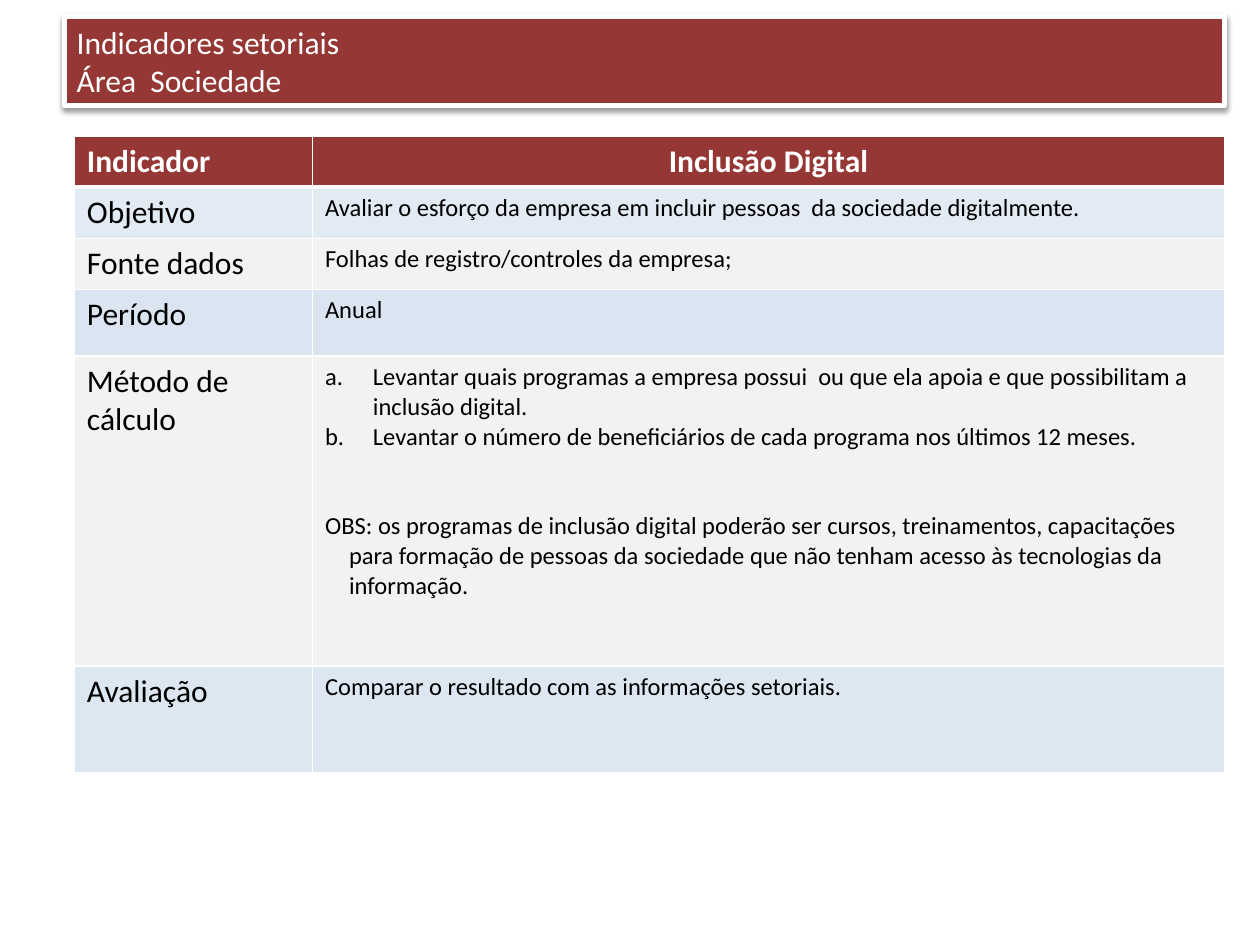
from dataclasses import dataclass

from lxml.etree import SubElement
from pptx import Presentation
from pptx.dml.color import RGBColor
from pptx.enum.shapes import MSO_SHAPE
from pptx.enum.text import MSO_ANCHOR, MSO_AUTO_SIZE, PP_ALIGN
from pptx.oxml.ns import qn
from pptx.util import Inches, Pt


@dataclass(frozen=True)
class Theme:
    font: str = "Calibri"
    red: str = "953735"
    blue: str = "B9CDE5"
    gray: str = "F2F2F2"
    white: str = "FFFFFF"
    black: str = "000000"
    label_size: int = 18
    body_size: int = 14
    border: int = 1
    heavy_border: int = 3


@dataclass(frozen=True)
class Item:
    text: str
    indent: float = 0
    lettered: bool = False
    gap: int = 0


def add_xml(parent, tag, **attributes):
    return SubElement(parent, qn(tag), {key: str(value) for key, value in attributes.items()})


class SlideBuilder:
    def __init__(self, presentation, theme):
        self.theme = theme
        self.width, self.height = presentation.slide_width, presentation.slide_height
        self.slide = presentation.slides.add_slide(presentation.slide_layouts[6])

    def box(self, left, top, width, height):
        """Turn shares of the slide's size into lengths."""
        return (int(left * self.width), int(top * self.height),
                int(width * self.width), int(height * self.height))

    def add_text(self, paragraph, text, color, **formats):
        run = paragraph.add_run()
        run.text = text
        values = {"name": self.theme.font, "size": Pt(self.theme.label_size), "bold": False}
        for name, value in (values | formats).items():
            setattr(run.font, name, value)
        run.font.color.rgb = RGBColor.from_string(color)

    def paint(self, fill, color):
        fill.solid()
        fill.fore_color.rgb = RGBColor.from_string(color)

    def banner(self, lines, *area):
        shape = self.slide.shapes.add_shape(MSO_SHAPE.RECTANGLE, *self.box(*area))
        self.paint(shape.fill, self.theme.red)
        self.paint(shape.line.fill, self.theme.white)
        shape.line.width = Pt(self.theme.heavy_border)
        # Soft shadow straight below
        shape.shadow.inherit = False
        effects = shape._element.spPr.find(qn("a:effectLst"))
        shadow = add_xml(effects, "a:outerShdw", blurRad=Pt(3.1), dist=Pt(1.6),
                         dir=5400000, rotWithShape=0)
        color = add_xml(shadow, "a:srgbClr", val=self.theme.black)
        add_xml(color, "a:alpha", val=38000)
        frame = shape.text_frame
        for name, value in {"word_wrap": True, "auto_size": MSO_AUTO_SIZE.SHAPE_TO_FIT_TEXT,
                            "vertical_anchor": MSO_ANCHOR.MIDDLE}.items():
            setattr(frame, name, value)
        for index, line in enumerate(lines):
            paragraph = frame.add_paragraph() if index else frame.paragraphs[0]
            paragraph.alignment = PP_ALIGN.LEFT
            self.add_text(paragraph, line, self.theme.white)

    def table(self, rows, columns, heights, left, top):
        area = self.box(left, top, sum(columns), sum(heights))
        table = self.slide.shapes.add_table(len(rows), len(columns), *area).table
        table.horz_banding = False
        for column, share in zip(table.columns, columns):
            column.width = int(share * self.width)
        for row, share in zip(table.rows, heights):
            row.height = int(share * self.height)
        for row_index, (fill, opacity, label, content) in enumerate(rows):
            header = row_index == 0
            for column_index, items in enumerate(([Item(label)], content)):
                cell = table.cell(row_index, column_index)
                self.borders(cell, row_index)
                self.cell_fill(cell, fill, opacity)
                large = header or column_index == 0
                size = self.theme.label_size if large else self.theme.body_size
                color = self.theme.white if header else self.theme.black
                frame = cell.text_frame
                for index, item in enumerate(items):
                    paragraph = frame.add_paragraph() if index else frame.paragraphs[0]
                    self.item_format(paragraph, item)
                    if header and column_index:
                        paragraph.alignment = PP_ALIGN.CENTER
                    self.add_text(paragraph, item.text, color, size=Pt(size), bold=header)

    def borders(self, cell, row_index):
        properties = cell._tc.get_or_add_tcPr()
        heavy = {0: "a:lnB", 1: "a:lnT"}.get(row_index)
        for tag in ("a:lnL", "a:lnR", "a:lnT", "a:lnB"):
            weight = self.theme.heavy_border if tag == heavy else self.theme.border
            line = add_xml(properties, tag, w=Pt(weight))
            add_xml(add_xml(line, "a:solidFill"), "a:srgbClr", val=self.theme.white)

    def cell_fill(self, cell, color, opacity):
        self.paint(cell.fill, color)
        if opacity < 100:
            color_element = cell._tc.tcPr.find(qn("a:solidFill")).find(qn("a:srgbClr"))
            add_xml(color_element, "a:alpha", val=opacity * 1000)

    def item_format(self, paragraph, item):
        if item.gap:
            paragraph.space_before = Pt(item.gap)
        if item.indent:
            properties = paragraph._p.get_or_add_pPr()
            properties.set("marL", str(Inches(item.indent)))
            properties.set("indent", str(-Inches(item.indent)))
            if item.lettered:
                add_xml(properties, "a:buAutoNum", type="alphaLcPeriod")
            else:
                add_xml(properties, "a:buNone")


def main():
    presentation = Presentation()
    presentation.slide_width, presentation.slide_height = Inches(10), Inches(7.5)
    theme = Theme()
    builder = SlideBuilder(presentation, theme)

    # Indicator table
    method = [
        Item("Levantar quais programas a empresa possui  ou que ela apoia e que "
             "possibilitam a inclusão digital.", 0.38, True),
        Item("Levantar o número de beneficiários de cada programa nos últimos 12 meses.",
             0.38, True),
        Item("OBS: os programas de inclusão digital poderão ser cursos, treinamentos, "
             "capacitações para formação de pessoas da sociedade que não tenham acesso "
             "às tecnologias da informação.", 0.19, gap=34),
    ]
    rows = [
        (theme.red, 100, "Indicador", [Item("Inclusão Digital")]),
        (theme.blue, 41, "Objetivo", [Item(
            "Avaliar o esforço da empresa em incluir pessoas  da sociedade digitalmente.")]),
        (theme.gray, 100, "Fonte dados", [Item("Folhas de registro/controles da empresa;")]),
        (theme.blue, 51, "Período", [Item("Anual")]),
        (theme.gray, 100, "Método de cálculo", method),
        (theme.blue, 48, "Avaliação", [Item(
            "Comparar o resultado com as informações setoriais.")]),
    ]
    heights = [inches / 7.5 for inches in (0.4, 0.4, 0.4, 0.53, 2.46, 0.85)]
    builder.table(rows, (0.189, 0.724), heights, 0.059, 1.08 / 7.5)

    # Title banner
    builder.banner(["Indicadores setoriais", "Área  Sociedade"],
                   0.051, 0.13 / 7.5, 0.921, 0.71 / 7.5)

    presentation.save("out.pptx")


if __name__ == "__main__":
    main()
